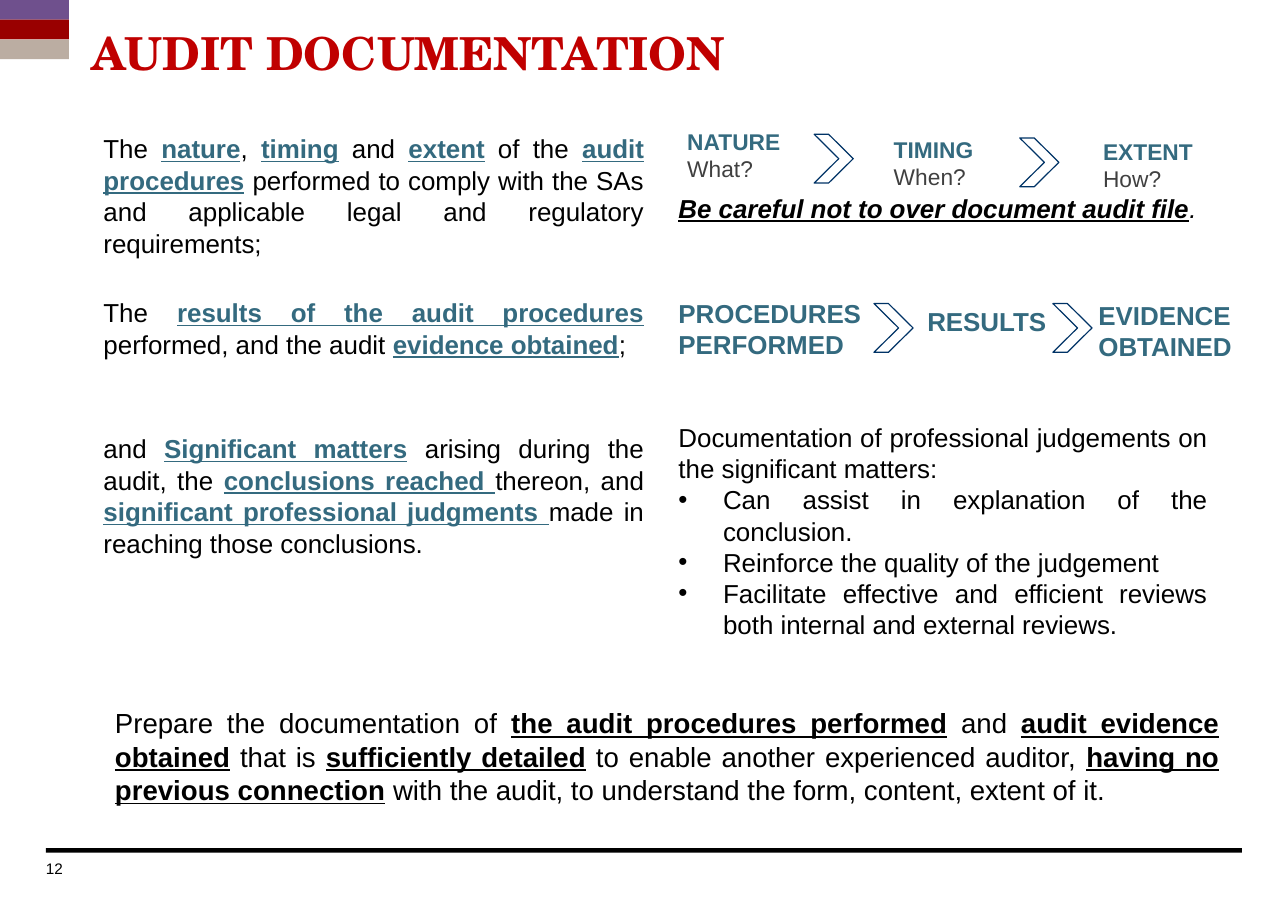
"""Build the audit documentation slide."""
from lxml.etree import SubElement
from pptx import Presentation
from pptx.dml.color import RGBColor
from pptx.enum.shapes import MSO_SHAPE as Preset
from pptx.enum.text import PP_ALIGN as Align
from pptx.oxml.ns import qn
from pptx.util import Cm, Pt

COLORS = {
    "black": "000000", "red": "C00000", "teal": "346A7F", "gray": "404040", "navy": "003366",
    "purple": "6F508D", "maroon": "990000", "beige": "BBADA2",
}
BULLET_INDENT = Cm(0.97)

deck = Presentation()
deck.slide_width, deck.slide_height = Cm(28), Cm(20)
page = deck.slides.add_slide(deck.slide_layouts[6])


def add_frame(left, top, width, height):
    frame = page.shapes.add_textbox(Cm(left), Cm(top), Cm(width), Cm(height)).text_frame
    frame.word_wrap = True
    frame.margin_left = frame.margin_right = frame.margin_top = frame.margin_bottom = 0
    return frame


def write(frame, text, size=16, spacing=19.2, after=0, align=Align.LEFT, font="Arial",
          color="black", accent="teal", underline=True, italic=False, bullet=False):
    """Add a paragraph; parts between asterisks are bold in the accent colour."""
    first = frame.paragraphs[0]
    para = frame.add_paragraph() if first.runs else first
    para.alignment = align
    para.line_spacing, para.space_after = Pt(spacing), Pt(after)
    for index, part in enumerate(text.split("*")):
        if not part:
            continue
        strong = index % 2 == 1
        span = para.add_run()
        span.text = part
        span.font.name, span.font.size = font, Pt(size)
        span.font.bold, span.font.italic = strong, italic
        span.font.underline = strong and underline
        span.font.color.rgb = RGBColor.from_string(COLORS[accent if strong else color])
    if bullet:
        properties = para._p.get_or_add_pPr()
        properties.set("marL", str(BULLET_INDENT))
        properties.set("indent", str(-BULLET_INDENT))
        SubElement(properties, qn("a:buFont")).set("typeface", "Arial")
        SubElement(properties, qn("a:buChar")).set("char", "•")


bars = [(0, 0.43 * row, 1.5, 0.43, color) for row, color in enumerate(["purple", "maroon", "beige"])]
bars.append((1, 18.44, 26, 0.1, "black"))
for left, top, width, height, color in bars:
    bar = page.shapes.add_shape(Preset.RECTANGLE, Cm(left), Cm(top), Cm(width), Cm(height))
    bar.shadow.inherit = False
    bar.fill.solid()
    bar.fill.fore_color.rgb = RGBColor.from_string(COLORS[color])
    bar.line.fill.background()

title = add_frame(2, 0.61, 25, 1.5)
write(title, "*AUDIT DOCUMENTATION*", size=28, spacing=32.1, font="TeX Gyre Schola",
      accent="red", underline=False)

requirements = add_frame(2.25, 2.88, 11.75, 10)
for text, after in [
    ("The *nature*, *timing* and *extent* of the *audit procedures* performed to comply with "
     "the SAs and applicable legal and regulatory requirements;", 23.5),
    ("The *results of the audit procedures *performed, and the audit *evidence obtained*;", 45),
    ("and *Significant matters* arising during the audit, the *conclusions reached *thereon, and "
     "*significant professional judgments *made in reaching those conclusions.", 0),
]:
    write(requirements, text, spacing=19.4, after=after, align=Align.JUSTIFY)

guidance = add_frame(14.75, 4.18, 11.5, 10)
write(guidance, "*Be careful not to over document audit file*.", accent="black", italic=True, after=45.5)
write(guidance, "*PROCEDURES*", underline=False)
write(guidance, "*PERFORMED*", underline=False, after=38.3)
write(guidance, "Documentation of professional judgements on the significant matters:", align=Align.JUSTIFY)
for text in [
    "Can assist in explanation of the conclusion.",
    "Reinforce the quality of the judgement",
    "Facilitate effective and efficient reviews both internal and external reviews.",
]:
    write(guidance, text, align=Align.JUSTIFY, bullet=True)

for left, top, size, spacing, lines in [
    (14.94, 2.78, 14, 16.6, ["*NATURE*", "What?"]),
    (19.43, 2.95, 14, 16.6, ["*TIMING*", "When?"]),
    (23.98, 3, 14, 16.6, ["*EXTENT*", "How?"]),
    (20.16, 6.65, 16, 19.2, ["*RESULTS*"]),
    (23.88, 6.51, 16, 19.2, ["*EVIDENCE*", "*OBTAINED*"]),
]:
    label = add_frame(left, top, 3.5, 1.3)
    for line in lines:
        write(label, line, size=size, spacing=spacing, color="gray", underline=False)

for left, top in [(17.7, 2.92), (22.17, 3), (19, 6.6), (22.89, 6.6)]:
    arrow = page.shapes.add_shape(Preset.CHEVRON, Cm(left), Cm(top), Cm(0.85), Cm(1.06))
    arrow.shadow.inherit = False
    arrow.adjustments[0] = 0.63
    arrow.fill.background()
    arrow.line.color.rgb = RGBColor.from_string(COLORS["navy"])
    arrow.line.width = Pt(0.75)

summary = add_frame(2.5, 15.35, 24, 2.6)
write(summary, "Prepare the documentation of *the audit procedures performed* and *audit evidence "
      "obtained* that is *sufficiently detailed* to enable another experienced auditor, *having no "
      "previous connection* with the audit, to understand the form, content, extent of it.",
      size=17, spacing=20.5, accent="black", align=Align.JUSTIFY)

number = add_frame(1, 18.69, 2, 0.5)
write(number, "12", size=9.4, spacing=11)

deck.save("out.pptx")
